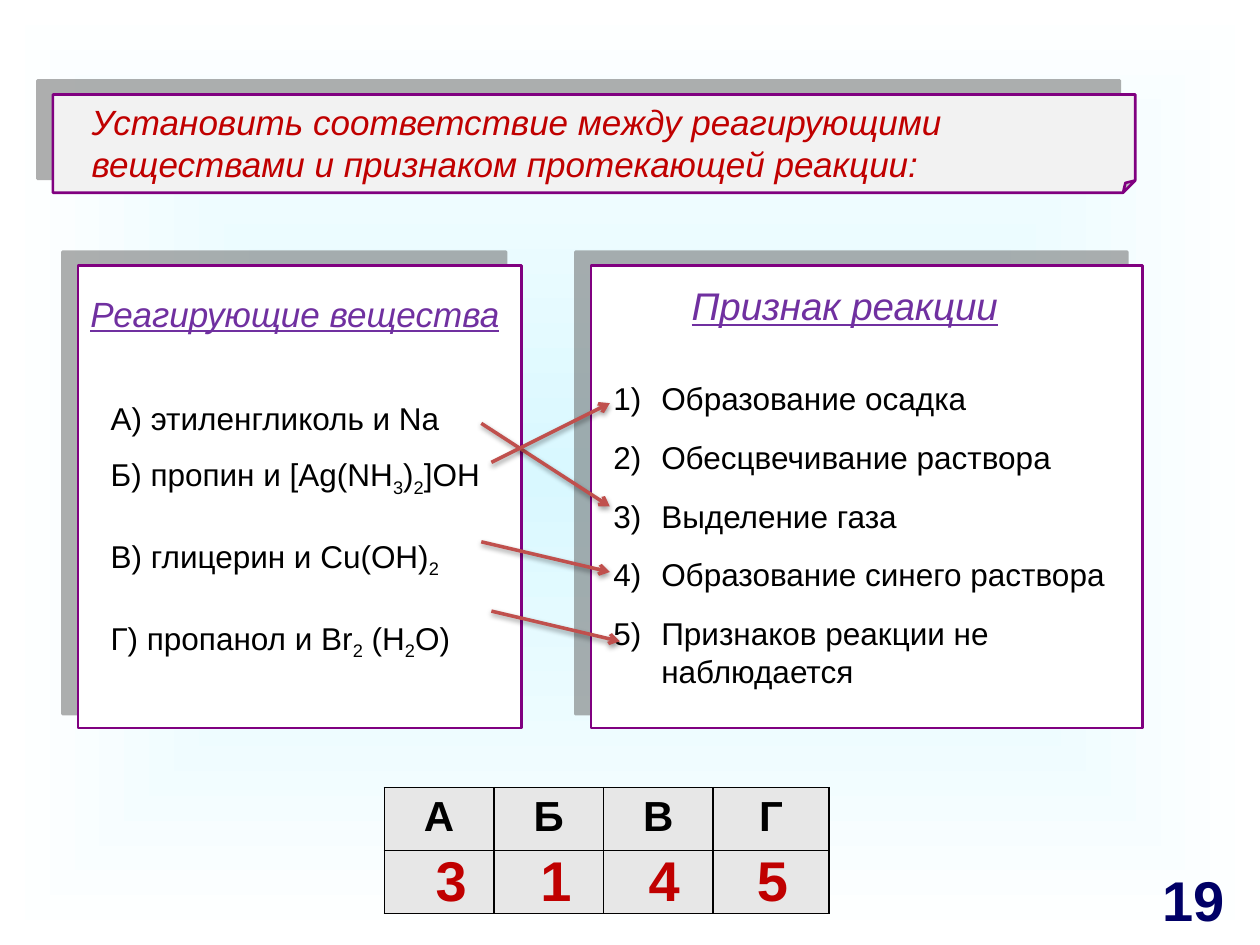
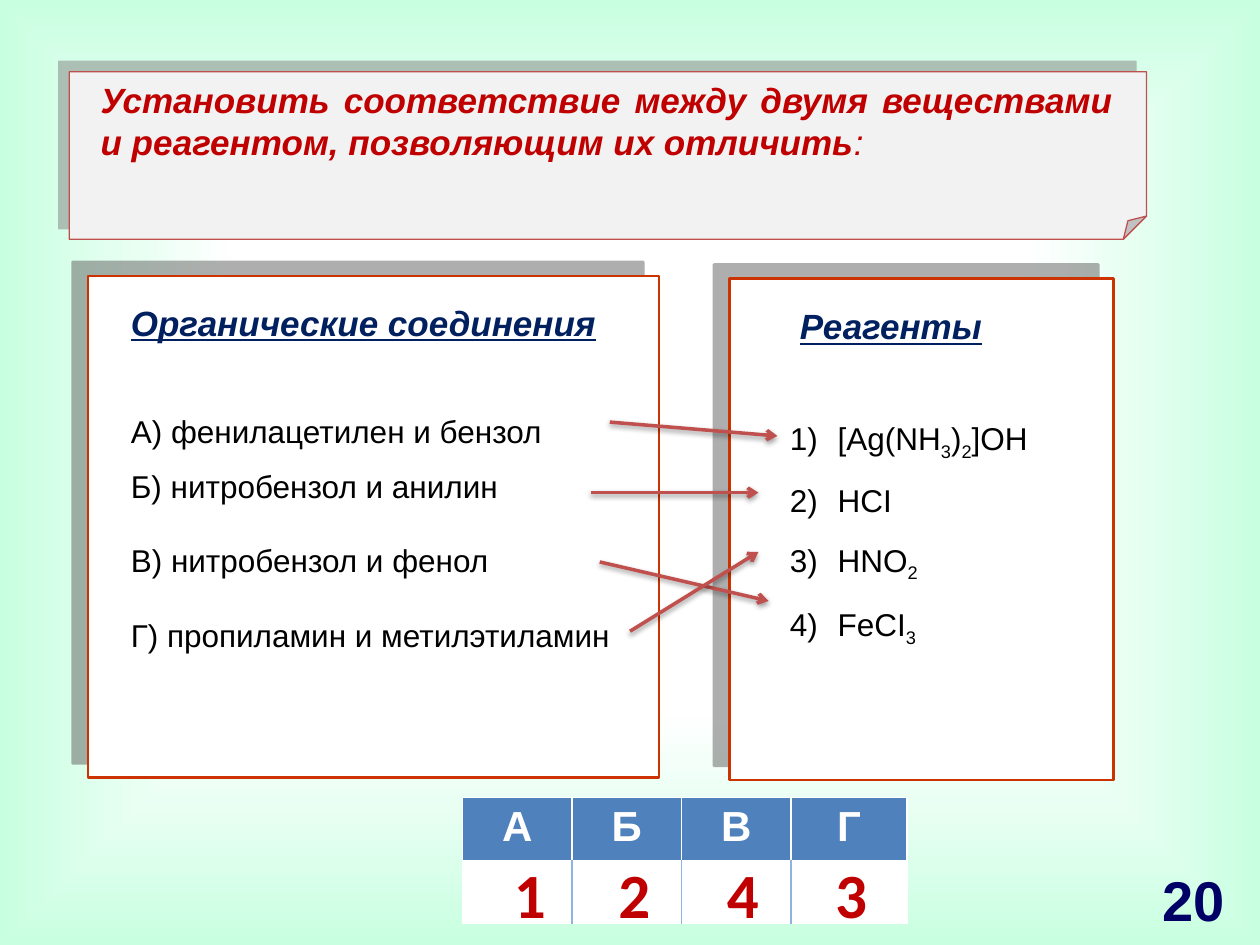
from dataclasses import dataclass

import lxml.etree
import pptx
import pptx.dml.color
import pptx.enum.shapes
import pptx.enum.text
import pptx.oxml.ns
import pptx.presentation
import pptx.shapes.base
import pptx.shapes.shapetree
import pptx.slide
import pptx.table
import pptx.text.text
import pptx.util

Inches = pptx.util.Inches
Pt = pptx.util.Pt
RGBColor = pptx.dml.color.RGBColor
Align = pptx.enum.text.PP_ALIGN
Shape = pptx.enum.shapes.MSO_SHAPE
qn = pptx.oxml.ns.qn

WHITE = RGBColor(0xFF, 0xFF, 0xFF)
BLACK = RGBColor(0, 0, 0)
CYAN = RGBColor(0xD9, 0xF8, 0xFF)
MINT = RGBColor(0xC9, 0xFF, 0xE1)
TITLE_FILL = RGBColor(0xF2, 0xF2, 0xF2)
DARK_RED = RGBColor(0xC0, 0, 0)
BRICK = RGBColor(0xC0, 0x50, 0x4D)
ORANGE = RGBColor(0xCC, 0x33, 0)
PURPLE = RGBColor(0x80, 0, 0x80)
VIOLET = RGBColor(0x70, 0x30, 0xA0)
NAVY = RGBColor(0, 0x20, 0x60)
PAGE_BLUE = RGBColor(0, 0, 0x66)
GREY_CELL = RGBColor(0xE7, 0xE7, 0xE7)
BLUE_CELL = RGBColor(0x4F, 0x81, 0xBD)
BLUE_EDGE = RGBColor(0x8E, 0xB4, 0xE3)
PANEL_SHADE = RGBColor(0x5F, 0x5F, 0x5F)
TITLE_SHADE = RGBColor(0x80, 0x80, 0x80)

LETTERS = "АБВГ"
COLUMN_WIDTHS = (0.87, 0.87, 0.87, 0.92)
ANSWER_OFFSETS = (0.31, 1.14, 2.0, 2.86)
ROW_HEIGHT = 0.5
ANSWER_DROP = 0.41

Box = tuple[float, float, float, float]
Line = tuple[float, float, float, float]


@dataclass(frozen=True)
class Font:
    size: float
    color: RGBColor
    bold: bool = False
    italic: bool = False
    underline: bool = False
    name: str = "Arial"


@dataclass(frozen=True)
class Shadow:
    color: RGBColor
    alpha: int
    blur: float
    distance: float
    angle: int


@dataclass(frozen=True)
class Item:
    text: str
    line_spacing: float = 1.0
    space_after: float = 0


@dataclass(frozen=True)
class Panel:
    frame: Box
    heading: str
    heading_box: Box
    heading_font: Font
    items: list[Item]
    items_box: Box
    numbered: bool = False


@dataclass(frozen=True)
class Title:
    text: str
    frame: Box
    text_box: Box
    font: Font
    align: Align
    edge: RGBColor
    edge_width: float
    fold: int
    shadow: Shadow


@dataclass(frozen=True)
class AnswerKey:
    left: float
    top: float
    answers: str
    answer_font: Font
    header_fill: RGBColor
    header_color: RGBColor
    body_fill: RGBColor
    outer_edge: RGBColor
    header_edge: RGBColor
    body_edge: RGBColor


@dataclass(frozen=True)
class Exercise:
    number: int
    inner: RGBColor
    outer: RGBColor
    inner_stop: float
    title: Title
    panel_edge: RGBColor
    panels: list[Panel]
    key: AnswerKey
    matches: list[Line]


PANEL_SHADOW = Shadow(PANEL_SHADE, 50, 0, 12, 222)
ARROW_SHADOW = Shadow(BLACK, 38, 3.1, 1.6, 90)
ITEM_FONT = Font(18, BLACK)
PAGE_FONT = Font(32, PAGE_BLUE, bold=True)


def inches(values: tuple[float, ...]) -> list[int]:
    return [Inches(value) for value in values]


def style_run(run: pptx.text.text._Run, font: Font) -> None:
    run.font.name = font.name
    run.font.size = Pt(font.size)
    run.font.bold = font.bold
    run.font.italic = font.italic
    run.font.underline = font.underline
    run.font.color.rgb = font.color


def cast_shadow(shape: pptx.shapes.base.BaseShape, shadow: Shadow) -> None:
    effects = lxml.etree.SubElement(shape.element.spPr, qn("a:effectLst"))
    outer = lxml.etree.SubElement(
        effects, qn("a:outerShdw"), blurRad=str(Pt(shadow.blur)),
        dist=str(Pt(shadow.distance)), dir=str(shadow.angle * 60000), rotWithShape="0")
    tint = lxml.etree.SubElement(outer, qn("a:srgbClr"), val=str(shadow.color))
    lxml.etree.SubElement(tint, qn("a:alpha"), val=str(shadow.alpha * 1000))


def add_card(shapes: pptx.shapes.shapetree._BaseGroupShapes, kind: Shape, box: Box,
             fill: RGBColor, edge: RGBColor, width: float,
             shadow: Shadow) -> pptx.shapes.base.BaseShape:
    card = shapes.add_shape(kind, *inches(box))
    card.fill.solid()
    card.fill.fore_color.rgb = fill
    card.line.color.rgb = edge
    card.line.width = Pt(width)
    cast_shadow(card, shadow)
    return card


def add_text(shapes: pptx.shapes.shapetree._BaseGroupShapes, box: Box, text: str,
             font: Font, align: Align = Align.LEFT) -> pptx.text.text.TextFrame:
    frame = shapes.add_textbox(*inches(box)).text_frame
    frame.word_wrap = True
    frame.text = text
    frame.paragraphs[0].alignment = align
    for run in frame.paragraphs[0].runs:
        style_run(run, font)
    return frame


def add_items(shapes: pptx.shapes.shapetree._BaseGroupShapes, panel: Panel) -> None:
    frame = add_text(shapes, panel.items_box, "", ITEM_FONT)
    for index, item in enumerate(panel.items):
        paragraph = frame.add_paragraph() if index else frame.paragraphs[0]
        paragraph.line_spacing = item.line_spacing
        paragraph.space_after = Pt(item.space_after)
        if panel.numbered:
            properties = paragraph._p.get_or_add_pPr()
            properties.set("marL", str(Inches(0.38)))
            properties.set("indent", str(-Inches(0.38)))
            lxml.etree.SubElement(properties, qn("a:buAutoNum"), type="arabicParenR")
        for position, part in enumerate(item.text.split("_")):
            if part:
                run = paragraph.add_run()
                run.text = part
                style_run(run, ITEM_FONT)
                if position % 2:
                    run.font._element.set("baseline", "-25000")


def add_panel(slide: pptx.slide.Slide, panel: Panel, edge: RGBColor) -> None:
    shapes = slide.shapes.add_group_shape().shapes
    add_card(shapes, Shape.RECTANGLE, panel.frame, WHITE, edge, 1.5, PANEL_SHADOW)
    add_text(shapes, panel.heading_box, panel.heading, panel.heading_font)
    add_items(shapes, panel)


def add_title(slide: pptx.slide.Slide, title: Title) -> None:
    card = add_card(slide.shapes, Shape.FOLDED_CORNER, title.frame, TITLE_FILL,
                    title.edge, title.edge_width, title.shadow)
    guides = card.element.spPr.find(qn("a:prstGeom")).find(qn("a:avLst"))
    lxml.etree.SubElement(guides, qn("a:gd"), name="adj", fmla=f"val {title.fold}")
    frame = add_text(slide.shapes, title.text_box, title.text, title.font, title.align)
    colon = frame.paragraphs[0].add_run()
    colon.text = ":"
    style_run(colon, title.font)
    colon.font.bold = False


def set_borders(cell: pptx.table._Cell, edges: dict[str, RGBColor]) -> None:
    properties = cell._tc.get_or_add_tcPr()
    for side, color in edges.items():
        border = lxml.etree.SubElement(properties, qn(f"a:ln{side}"), w=str(Pt(1)))
        solid = lxml.etree.SubElement(border, qn("a:solidFill"))
        lxml.etree.SubElement(solid, qn("a:srgbClr"), val=str(color))


def add_key(slide: pptx.slide.Slide, key: AnswerKey) -> None:
    last = len(LETTERS) - 1
    table = slide.shapes.add_table(2, len(LETTERS), *inches(
        (key.left, key.top, sum(COLUMN_WIDTHS), 2 * ROW_HEIGHT))).table
    rows = ((key.header_fill, key.header_edge), (key.body_fill, key.body_edge))
    for column, letter in enumerate(LETTERS):
        table.columns[column].width = Inches(COLUMN_WIDTHS[column])
        for row, (fill, inner_edge) in enumerate(rows):
            cell = table.cell(row, column)
            set_borders(cell, {
                "L": inner_edge if column else key.outer_edge,
                "R": inner_edge if column < last else key.outer_edge,
                "T": key.outer_edge,
                "B": key.outer_edge})
            cell.fill.solid()
            cell.fill.fore_color.rgb = fill
        heading = table.cell(0, column).text_frame.paragraphs[0]
        heading.text = letter
        heading.alignment = Align.CENTER
        style_run(heading.runs[0], Font(24, key.header_color, bold=True))
    for offset, answer in zip(ANSWER_OFFSETS, key.answers):
        add_text(slide.shapes, (key.left + offset, key.top + ANSWER_DROP, 0.34, 0.64),
                 answer, key.answer_font, Align.CENTER)


def add_match(slide: pptx.slide.Slide, match: Line) -> None:
    arrow = slide.shapes.add_connector(
        pptx.enum.shapes.MSO_CONNECTOR.STRAIGHT, *inches(match))
    arrow.line.color.rgb = BRICK
    arrow.line.width = Pt(2)
    lxml.etree.SubElement(arrow.element.spPr.find(qn("a:ln")), qn("a:tailEnd"), type="arrow")
    cast_shadow(arrow, ARROW_SHADOW)


def set_background(slide: pptx.slide.Slide, exercise: Exercise) -> None:
    fill = slide.background.fill
    fill.gradient()
    stops = ((exercise.inner, exercise.inner_stop), (exercise.outer, 1.0))
    for stop, (color, position) in zip(fill.gradient_stops, stops):
        stop.color.rgb = color
        stop.position = position
    gradient = slide.element.find(".//" + qn("a:gradFill"))
    gradient.remove(gradient.find(qn("a:lin")))
    glow = lxml.etree.SubElement(gradient, qn("a:path"), {"path": "shape"})
    lxml.etree.SubElement(glow, qn("a:fillToRect"), dict.fromkeys("ltrb", "50000"))


def add_exercise(deck: pptx.presentation.Presentation, exercise: Exercise) -> None:
    slide = deck.slides.add_slide(deck.slide_layouts[6])
    set_background(slide, exercise)
    add_title(slide, exercise.title)
    for panel in exercise.panels:
        add_panel(slide, panel, exercise.panel_edge)
    add_key(slide, exercise.key)
    add_text(slide.shapes, (9.02, 6.82, 0.9, 0.52), str(exercise.number), PAGE_FONT, Align.CENTER)
    for match in exercise.matches:
        add_match(slide, match)


def pairs(*texts: str) -> list[Item]:
    return [Item(text, 1.0 if index == 1 else 1.5, 10) for index, text in enumerate(texts)]


SIGNS = ("Образование осадка", "Обесцвечивание раствора", "Выделение газа",
         "Образование синего раствора", "Признаков реакции не наблюдается")
REAGENTS = ("[Ag(NH_3_)_2_]OH", "HCI", "HNO_2_", "FeCI_3_")
COMPOUND_HEADING = Font(20, NAVY, bold=True, italic=True, underline=True)

EXERCISES = [
    Exercise(
        19, CYAN, WHITE, 0.0,
        Title("Установить соответствие между реагирующими веществами и признаком "
              "протекающей реакции", (0.42, 0.75, 8.59, 0.78), (0.63, 0.75, 8.2, 0.77),
              Font(20, DARK_RED, italic=True), Align.LEFT, PURPLE, 1.5, 12500, PANEL_SHADOW),
        PURPLE,
        [Panel((0.62, 2.11, 3.52, 3.67), "Реагирующие вещества", (0.62, 2.27, 3.67, 0.44),
               Font(20, VIOLET, italic=True, underline=True),
               pairs("А) этиленгликоль и Na", "Б) пропин и [Ag(NH_3_)_2_]OH",
                     "В) глицерин и Cu(OH)_2_", "Г) пропанол и Br_2_ (H_2_O)"),
               (0.78, 2.97, 3.28, 2.19)),
         Panel((4.69, 2.11, 4.38, 3.67), "Признак реакции", (5.39, 2.19, 3.05, 0.47),
               Font(22, VIOLET, italic=True, underline=True),
               [Item(sign, space_after=12) for sign in SIGNS], (4.77, 2.96, 4.22, 2.59), True)],
        AnswerKey(3.05, 6.25, "3145", Font(32, DARK_RED, bold=True),
                  GREY_CELL, BLACK, GREY_CELL, BLACK, BLACK, BLACK),
        [(3.82, 3.36, 4.84, 4.02), (3.9, 3.67, 4.84, 3.2),
         (3.82, 4.3, 4.84, 4.54), (3.9, 4.85, 4.92, 5.09)]),
    Exercise(
        20, WHITE, MINT, 0.5,
        Title("Установить соответствие между двумя веществами и реагентом, позволяющим "
              "их отличить", (0.55, 0.57, 8.55, 1.33), (0.7, 0.57, 8.23, 0.77),
              Font(20, DARK_RED, bold=True, italic=True), Align.JUSTIFY, BRICK, 0.75, 13900,
              Shadow(TITLE_SHADE, 50, 0, 8.5, 225)),
        ORANGE,
        [Panel((0.7, 2.19, 4.53, 3.98), "Органические соединения", (0.94, 2.34, 3.91, 0.44),
               COMPOUND_HEADING,
               pairs("А) фенилацетилен и бензол", "Б) нитробензол и анилин",
                     "В) нитробензол и фенол", "Г) пропиламин и метилэтиламин"),
               (0.94, 3.07, 4.53, 2.19)),
         Panel((5.79, 2.21, 3.05, 3.98), "Реагенты", (6.25, 2.37, 1.95, 0.44),
               COMPOUND_HEADING, [Item(reagent, 1.5) for reagent in REAGENTS],
               (6.17, 3.11, 2.5, 2.37), True)],
        AnswerKey(3.67, 6.33, "1243", Font(36, DARK_RED, bold=True, name="Calibri"),
                  BLUE_CELL, WHITE, WHITE, WHITE, WHITE, BLUE_EDGE),
        [(4.84, 3.35, 6.17, 3.46), (4.69, 3.91, 6.02, 3.91),
         (4.76, 4.46, 6.1, 4.77), (5.0, 5.01, 6.02, 4.38)]),
]


def main() -> None:
    deck = pptx.Presentation()
    deck.slide_width, deck.slide_height = Inches(10), Inches(7.5)
    for exercise in EXERCISES:
        add_exercise(deck, exercise)
    deck.save("out.pptx")


if __name__ == "__main__":
    main()
